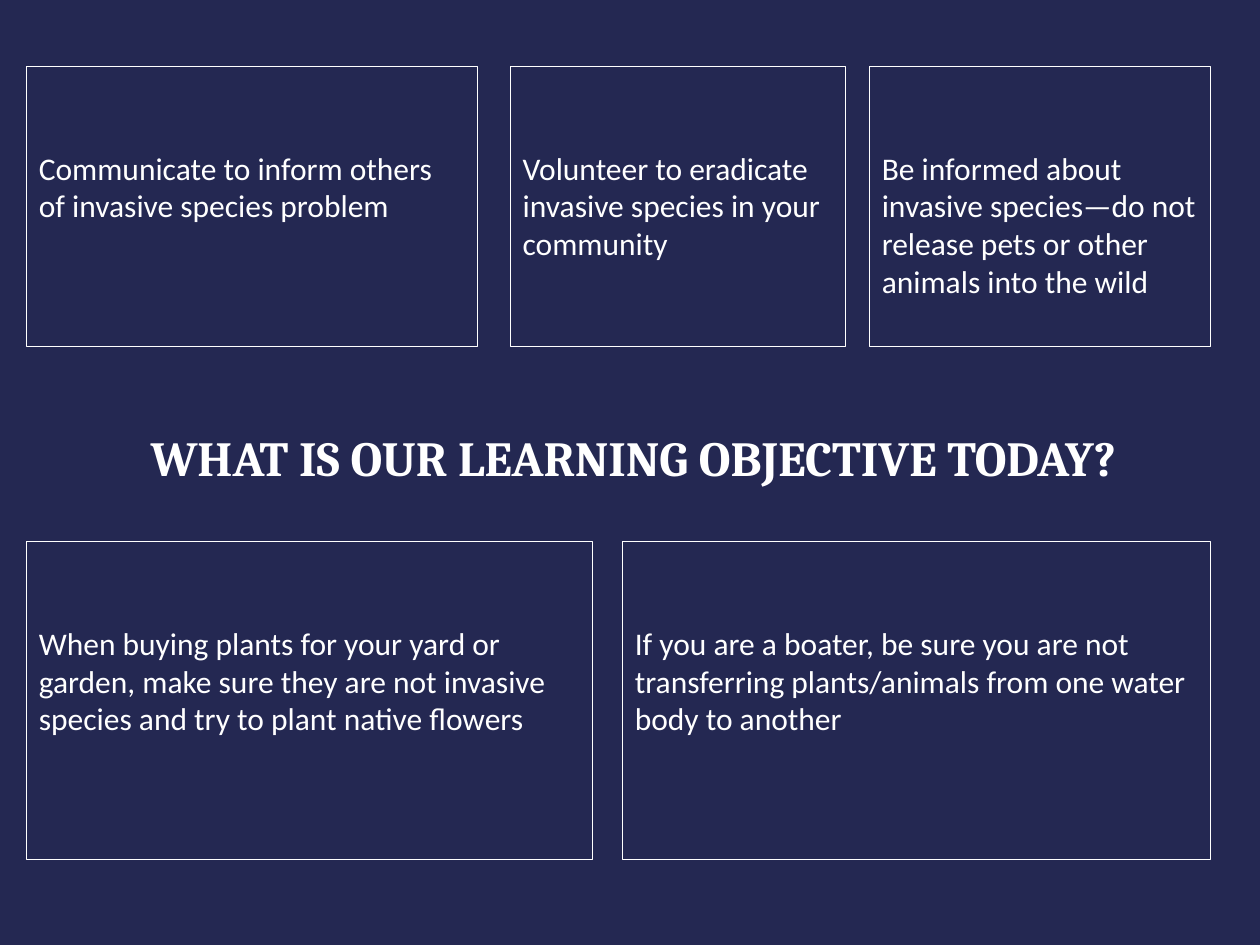
from pptx import Presentation
from pptx.dml.color import RGBColor
from pptx.enum.shapes import MSO_SHAPE
from pptx.enum.text import MSO_ANCHOR, MSO_AUTO_SIZE, PP_ALIGN
from pptx.util import Inches, Pt

NAVY = "242852"
WHITE = "FFFFFF"
TEXT_TOP_INSET = 0.65

# Each row: top, height, and its boxes as (left, width, text)
ACTION_ROWS = [
    (0.53, 2.22, [
        (0.21, 3.58, "Communicate to inform others of invasive species problem"),
        (4.05, 2.66, "Volunteer to eradicate invasive species in your community"),
        (6.9, 2.71, "Be informed about invasive species—do not release pets "
                    "or other animals into the wild"),
    ]),
    (4.3, 2.52, [
        (0.21, 4.49, "When buying plants for your yard or garden, make sure they "
                     "are not invasive species and try to plant native flowers"),
        (4.94, 4.67, "If you are a boater, be sure you are not transferring "
                     "plants/animals from one water body to another"),
    ]),
]


def color(hex_string):
    return RGBColor.from_string(hex_string)


def write_text(shape, text, *, size, font, bold=False,
               align=PP_ALIGN.LEFT, anchor=MSO_ANCHOR.TOP):
    frame = shape.text_frame
    frame.word_wrap = True
    frame.auto_size = MSO_AUTO_SIZE.NONE
    frame.vertical_anchor = anchor
    paragraph = frame.paragraphs[0]
    paragraph.alignment = align
    run = paragraph.add_run()
    run.text = text
    run.font.size = Pt(size)
    run.font.name = font
    run.font.bold = bold
    run.font.color.rgb = color(WHITE)


def set_background(slide):
    fill = slide.background.fill
    fill.solid()
    fill.fore_color.rgb = color(NAVY)


def add_title(slide, text):
    title = slide.shapes.title
    title.left, title.top = Inches(0.05), Inches(2.96)
    title.width, title.height = Inches(9.95), Inches(1.34)
    write_text(title, text, size=28, font="Cambria", bold=True,
               align=PP_ALIGN.CENTER, anchor=MSO_ANCHOR.MIDDLE)


def add_action_box(slide, left, top, width, height, text):
    box = slide.shapes.add_shape(MSO_SHAPE.RECTANGLE, Inches(left), Inches(top),
                                 Inches(width), Inches(height))
    box.shadow.inherit = False
    box.fill.background()
    box.line.color.rgb = color(WHITE)
    box.line.width = Pt(0.75)
    box.text_frame.margin_top = Inches(TEXT_TOP_INSET)
    write_text(box, text, size=18, font="Calibri")


def main():
    presentation = Presentation()
    presentation.slide_width = Inches(10)
    presentation.slide_height = Inches(7.5)
    slide = presentation.slides.add_slide(presentation.slide_layouts[5])
    set_background(slide)
    add_title(slide, "WHAT IS OUR LEARNING OBJECTIVE TODAY?")
    for top, height, boxes in ACTION_ROWS:
        for left, width, text in boxes:
            add_action_box(slide, left, top, width, height, text)
    presentation.save("out.pptx")


if __name__ == "__main__":
    main()
